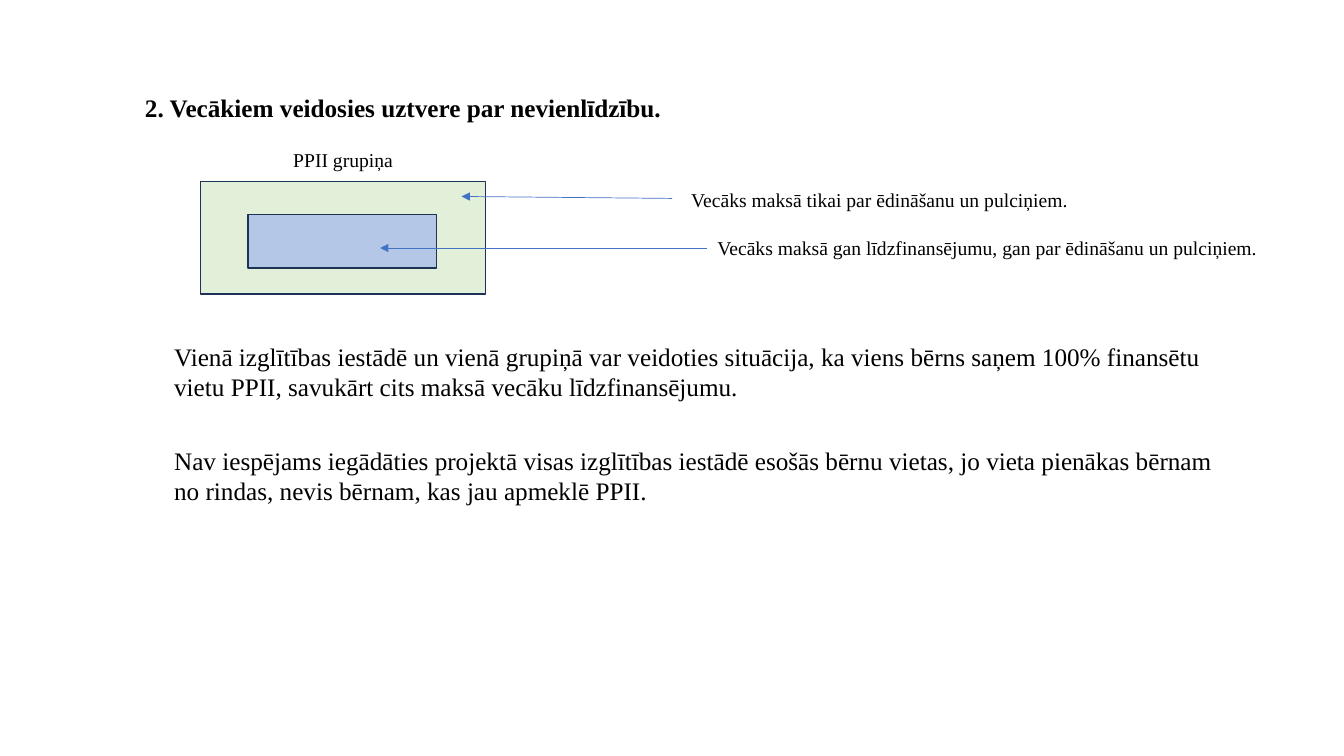
from dataclasses import dataclass

from lxml.etree import SubElement
from pptx import Presentation
from pptx.dml.color import RGBColor
from pptx.enum.shapes import MSO_CONNECTOR, MSO_SHAPE
from pptx.enum.text import MSO_ANCHOR, MSO_AUTO_SIZE, PP_ALIGN
from pptx.oxml.ns import qn
from pptx.util import Cm, Pt


@dataclass(frozen=True)
class Theme:
    font: str = "Times New Roman"
    ink: str = "000000"
    green: str = "E2F0D9"
    blue: str = "B4C7E7"
    edge: str = "1E3256"
    arrow: str = "4472C4"
    body: float = 18
    label: float = 14
    border: float = 1
    thin: float = 0.5


THEME = Theme()


def color(code):
    return RGBColor.from_string(code)


def place(shape, left, top, width, height):
    shape.left, shape.top = Cm(left), Cm(top)
    shape.width, shape.height = Cm(width), Cm(height)


def write(shape, text, size, bold=False, align=PP_ALIGN.LEFT):
    frame = shape.text_frame
    frame.word_wrap = True
    frame.auto_size = MSO_AUTO_SIZE.NONE
    frame.vertical_anchor = MSO_ANCHOR.TOP
    para = frame.paragraphs[0]
    para.alignment = align
    para.line_spacing = 1.0
    run = para.add_run()
    run.text = text
    run.font.name = THEME.font
    run.font.size = Pt(size)
    run.font.bold = bold
    run.font.color.rgb = color(THEME.ink)


def add_title(slide, text, box):
    title = slide.shapes.title
    place(title, *box)
    write(title, text, THEME.body, bold=True)


def add_text(slide, text, box, size, align=PP_ALIGN.LEFT):
    shape = slide.shapes.add_textbox(*map(Cm, box))
    write(shape, text, size, align=align)


def add_box(slide, box, fill):
    shape = slide.shapes.add_shape(MSO_SHAPE.RECTANGLE, *map(Cm, box))
    shape.shadow.inherit = False
    shape.fill.solid()
    shape.fill.fore_color.rgb = color(fill)
    shape.line.color.rgb = color(THEME.edge)
    shape.line.width = Pt(THEME.border)


def add_arrow(slide, start, end):
    arrow = slide.shapes.add_connector(
        MSO_CONNECTOR.STRAIGHT, *map(Cm, start + end))
    arrow.line.color.rgb = color(THEME.arrow)
    arrow.line.width = Pt(THEME.thin)
    props = arrow.element.spPr
    SubElement(props.find(qn("a:ln")), qn("a:tailEnd"), type="triangle")
    SubElement(props, qn("a:effectLst"))


def main():
    deck = Presentation()
    deck.slide_width, deck.slide_height = Cm(33.87), Cm(19.05)
    slide = deck.slides.add_slide(deck.slide_layouts[5])

    add_title(slide, "2. Vecākiem veidosies uztvere par nevienlīdzību.",
              (3.4, 2.21, 27.53, 1.8))

    add_text(slide, "PPII grupiņa", (5.97, 3.61, 5.36, 0.86),
             THEME.label, PP_ALIGN.CENTER)
    add_box(slide, (5.05, 4.57, 7.19, 2.84), THEME.green)
    add_box(slide, (6.25, 5.41, 4.75, 1.35), THEME.blue)

    add_arrow(slide, (16.94, 5.0), (11.63, 4.95))
    add_arrow(slide, (17.83, 6.25), (9.58, 6.25))
    add_text(slide, "Vecāks maksā tikai par ēdināšanu un pulciņiem.",
             (17.17, 4.62, 10.2, 0.86), THEME.label)
    add_text(slide, "Vecāks maksā gan līdzfinansējumu, "
             "gan par ēdināšanu un pulciņiem.",
             (17.83, 5.82, 14.3, 0.86), THEME.label)

    add_text(slide, "Vienā izglītības iestādē un vienā grupiņā var veidoties "
             "situācija, ka viens bērns saņem 100% finansētu vietu PPII, "
             "savukārt cits maksā vecāku līdzfinansējumu.",
             (4.14, 8.48, 27.36, 1.8), THEME.body)
    add_text(slide, "Nav iespējams iegādāties projektā visas izglītības "
             "iestādē esošās bērnu vietas, jo vieta pienākas bērnam no "
             "rindas, nevis bērnam, kas jau apmeklē PPII.",
             (4.14, 11.1, 26.77, 1.8), THEME.body)

    deck.save("out.pptx")


if __name__ == "__main__":
    main()
